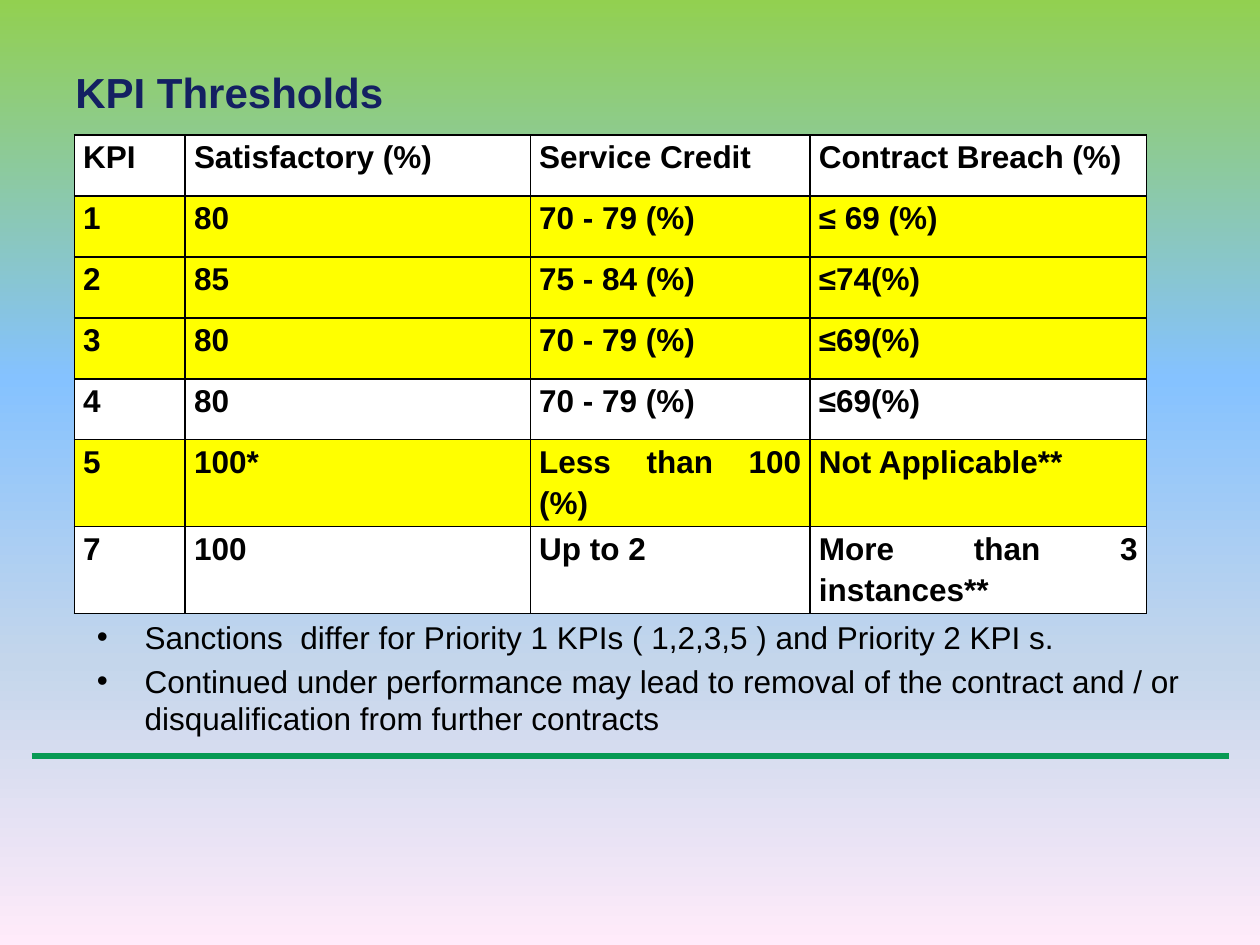
from copy import deepcopy

from lxml.etree import SubElement
from pptx import Presentation
from pptx.dml.color import RGBColor
from pptx.enum.text import MSO_ANCHOR, PP_ALIGN
from pptx.oxml.ns import qn
from pptx.util import Inches, Pt

WIDTH, HEIGHT = 10, 7.5
COLORS = {
    "title": "142062", "text": "000000", "rule": "089A54",
    "plain": "FFFFFF", "priority": "FFFF00",
}
SKY = [(0, "92D050"), (0.4, "85C2FF"), (0.7, "C4D6EB"), (1, "FFEBFA")]
PRIORITY_KPIS = {"1", "2", "3", "5"}
THRESHOLDS = [
    ("KPI", "Satisfactory (%)", "Service Credit", "Contract Breach (%)"),
    ("1", "80", "70 - 79 (%)", "≤ 69 (%)"),
    ("2", "85", "75 - 84 (%)", "≤74(%)"),
    ("3", "80", "70 - 79 (%)", "≤69(%)"),
    ("4", "80", "70 - 79 (%)", "≤69(%)"),
    ("5", "100*", "Less than 100 (%)", "Not Applicable**"),
    ("7", "100", "Up to 2", "More than 3 instances**"),
]
SANCTIONS = [
    "Sanctions  differ for Priority 1 KPIs ( 1,2,3,5 ) and Priority 2 KPI s.",
    "Continued under performance may lead to removal of the contract and / or "
    "disqualification from further contracts",
]


class SlideWriter:
    """Draws styled elements on one slide, placed by shares of its size."""

    def __init__(self, slide, font="Arial"):
        self.slide, self.font = slide, font

    def place(self, *shares):
        return [Inches(share * side) for share, side in zip(shares, (WIDTH, HEIGHT) * 2)]

    def color(self, name):
        return RGBColor.from_string(COLORS[name])

    def style(self, paragraph, size, color, bold=False):
        for run in paragraph.runs:
            run.font.name, run.font.size, run.font.bold = self.font, Pt(size), bold
            run.font.color.rgb = self.color(color)

    def background(self, stops):
        fill = self.slide.background.fill
        fill.gradient()
        fill.gradient_angle = 270
        stop_list = next(self.slide.element.iter(qn("a:gsLst")))
        while len(stop_list) < len(stops):
            stop_list.append(deepcopy(stop_list[-1]))
        for stop, (position, color) in zip(fill.gradient_stops, stops):
            stop.position = position
            stop.color.rgb = RGBColor.from_string(color)

    def rule(self, left, right, y):
        line = self.slide.shapes.add_connector(1, *self.place(left, y, right, y))
        line.line.color.rgb = self.color("rule")
        line.line.width = Pt(3)
        SubElement(line.element.spPr, qn("a:effectLst"))

    def text_box(self, *shares):
        frame = self.slide.shapes.add_textbox(*self.place(*shares)).text_frame
        frame.word_wrap = True
        return frame

    def title(self, text, *shares):
        frame = self.text_box(*shares)
        frame.vertical_anchor = MSO_ANCHOR.MIDDLE
        frame.text = text
        self.style(frame.paragraphs[0], 24, "title", bold=True)

    def bullets(self, items, *shares):
        frame = self.text_box(*shares)
        frame.text = "\n".join(items)
        for index, paragraph in enumerate(frame.paragraphs):
            properties = paragraph._p.get_or_add_pPr()
            properties.set("marL", str(Inches(0.38)))
            properties.set("indent", str(-Inches(0.38)))
            SubElement(properties, qn("a:buFont"), typeface=self.font)
            SubElement(properties, qn("a:buChar"), char="•")
            if index:
                paragraph.space_before = Pt(3.6)
            self.style(paragraph, 18, "text")

    def borders(self, cell):
        properties = cell._tc.get_or_add_tcPr()
        for side in ("lnL", "lnR", "lnT", "lnB"):
            edge = SubElement(properties, qn(f"a:{side}"), w=str(Pt(1)))
            paint = SubElement(edge, qn("a:solidFill"))
            SubElement(paint, qn("a:srgbClr"), val=COLORS["text"])

    def cell(self, cell, text, fill):
        cell.margin_left = cell.margin_right = Inches(0.07)
        cell.margin_top = cell.margin_bottom = 0
        self.borders(cell)
        cell.fill.solid()
        cell.fill.fore_color.rgb = self.color(fill)
        cell.text_frame.text = text
        paragraph = cell.text_frame.paragraphs[0]
        paragraph.alignment = PP_ALIGN.JUSTIFY
        paragraph.line_spacing = 1.15
        self.style(paragraph, 18, "text", bold=True)

    def table(self, rows, columns, row_height, left, top):
        place = self.place(left, top, sum(columns), row_height * len(rows))
        grid = self.slide.shapes.add_table(len(rows), len(columns), *place).table
        grid.first_row = grid.horz_banding = False
        for column, share in zip(grid.columns, columns):
            column.width = Inches(share * WIDTH)
        for row, texts in zip(grid.rows, rows):
            row.height = Inches(row_height * HEIGHT)
            fill = "priority" if texts[0] in PRIORITY_KPIS else "plain"
            for cell, text in zip(row.cells, texts):
                self.cell(cell, text, fill)


def main():
    deck = Presentation()
    deck.slide_width, deck.slide_height = Inches(WIDTH), Inches(HEIGHT)
    writer = SlideWriter(deck.slides.add_slide(deck.slide_layouts[6]))
    writer.background(SKY)
    writer.rule(0.025, 0.975, 0.8)
    writer.title("KPI Thresholds", 0.05, 0.04, 0.9, 0.113)
    writer.table(THRESHOLDS, (0.088, 0.274, 0.222, 0.267), 0.0645, 0.059, 0.143)
    writer.bullets(SANCTIONS, 0.067, 0.647, 0.89, 0.183)
    deck.save("out.pptx")


if __name__ == "__main__":
    main()
